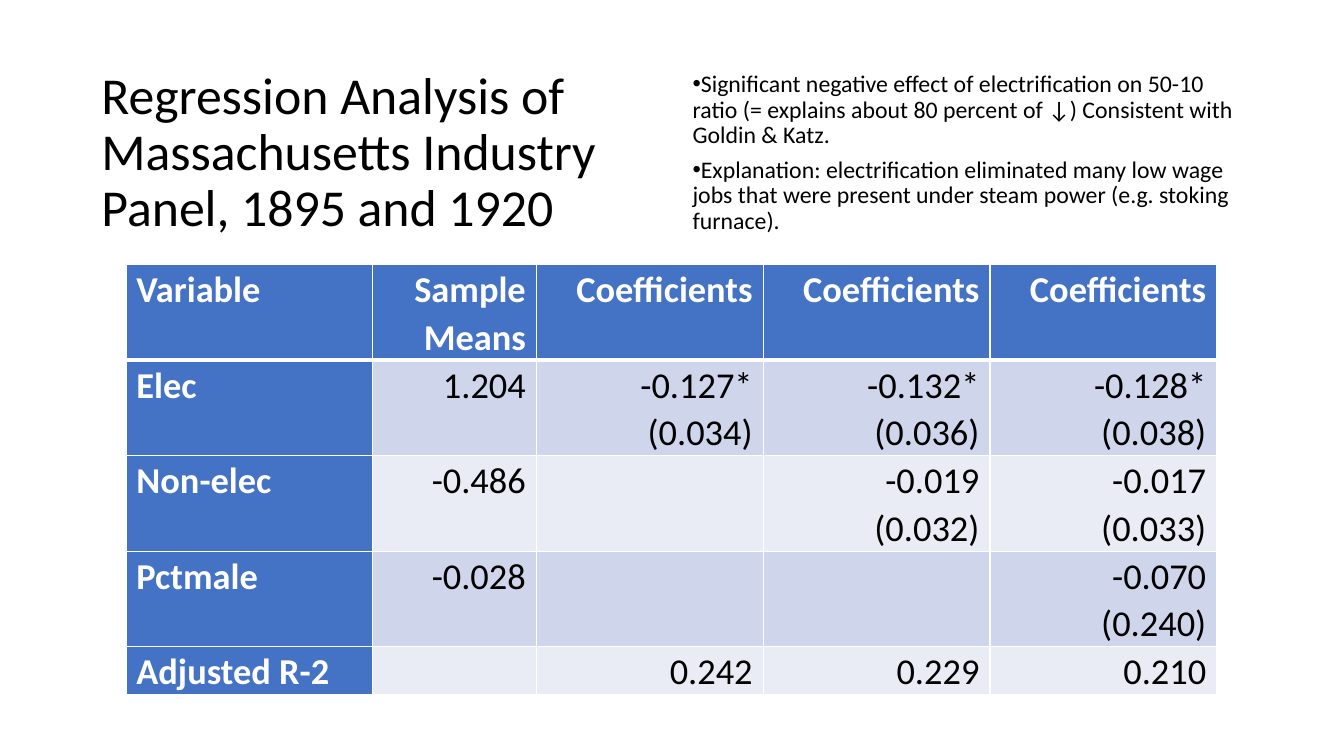
from pptx import Presentation
from pptx.dml.color import RGBColor
from pptx.enum.text import MSO_ANCHOR, MSO_AUTO_SIZE, PP_ALIGN
from pptx.oxml import parse_xml
from pptx.oxml.ns import nsdecls
from pptx.util import Pt

PX = 9525
FONT = "Calibri"
LEFT, RIGHT = PP_ALIGN.LEFT, PP_ALIGN.RIGHT
MIDDLE = MSO_ANCHOR.MIDDLE
NO_FIT = MSO_AUTO_SIZE.NONE
COLORS = {"ink": "000000", "white": "FFFFFF", "head": "4472C4",
          "dark": "CFD5EA", "light": "E9EBF5"}


def style(para, size, color, bold=False, align=LEFT, lead=0.9):
    para.alignment = align
    para.line_spacing = lead
    para.space_before = Pt(0)
    para.font.name = FONT
    para.font.size = Pt(size)
    para.font.bold = bold
    para.font.color.rgb = RGBColor.from_string(COLORS[color])


def place(shape, left, text):
    shape.left, shape.top = left * PX, 58 * PX
    shape.width, shape.height = 542 * PX, 176 * PX
    frame = shape.text_frame
    frame.text = text
    frame.word_wrap = True
    frame.auto_size = NO_FIT
    frame.vertical_anchor = MIDDLE
    return frame.paragraphs


deck = Presentation()
deck.slide_width, deck.slide_height = 1280 * PX, 720 * PX
slide = deck.slides.add_slide(deck.slide_layouts[1])
title, body = slide.placeholders

for para in place(title, 87, "Regression Analysis of Massachusetts Industry Panel, 1895 and 1920"):
    style(para, 37, "ink")

points = [
    "Significant negative effect of electrification on 50-10 ratio "
    "(= explains about 80 percent of ↓) Consistent with Goldin & Katz.",
    "Explanation: electrification eliminated many low wage jobs that were "
    "present under steam power (e.g. stoking furnace).",
]
for para in place(body, 650, "\n".join(points)):
    style(para, 17, "ink")
    para.space_after = Pt(6)
    props = para._p.get_or_add_pPr()
    props.set("marL", "0")
    props.set("indent", str(-24 * PX))

rows = [
    ["Variable", "Sample Means", "Coefficients", "Coefficients", "Coefficients"],
    ["Elec", "1.204", "-0.127*\n(0.034)", "-0.132*\n(0.036)", "-0.128*\n(0.038)"],
    ["Non-elec", "-0.486", "", "-0.019\n(0.032)", "-0.017\n(0.033)"],
    ["Pctmale", "-0.028", "", "", "-0.070\n(0.240)"],
    ["Adjusted R-2", "", "0.242", "0.229", "0.210"],
]
widths = [235, 156, 216, 216, 216]
heights = [91, 91, 91, 91, 46]
table = slide.shapes.add_table(len(rows), len(widths), 120 * PX, 252 * PX,
                               sum(widths) * PX, sum(heights) * PX).table
table.first_col = True
for col, width in zip(table.columns, widths):
    col.width = width * PX
for row, height in zip(table.rows, heights):
    row.height = height * PX

for r, row in enumerate(rows):
    for c, text in enumerate(row):
        cell = table.cell(r, c)
        head = r == 0 or c == 0
        fill = "head" if head else "dark" if r % 2 else "light"
        cell.text = text
        cell.margin_left = cell.margin_right = 10 * PX
        cell.margin_top = cell.margin_bottom = 0
        cell.fill.solid()
        cell.fill.fore_color.rgb = RGBColor.from_string(COLORS[fill])
        for para in cell.text_frame.paragraphs:
            style(para, 26, "white" if head else "ink", head,
                  RIGHT if c else LEFT, 1.07)
        props = cell._tc.get_or_add_tcPr()
        for i, side in enumerate("LRTB"):
            thick = (r, side) in [(0, "B"), (1, "T")]
            props.insert(i, parse_xml(
                f'<a:ln{side} {nsdecls("a")} w="{Pt(3 if thick else 1)}"><a:solidFill>'
                f'<a:srgbClr val="{COLORS["white"]}"/></a:solidFill></a:ln{side}>'))

deck.save("out.pptx")
